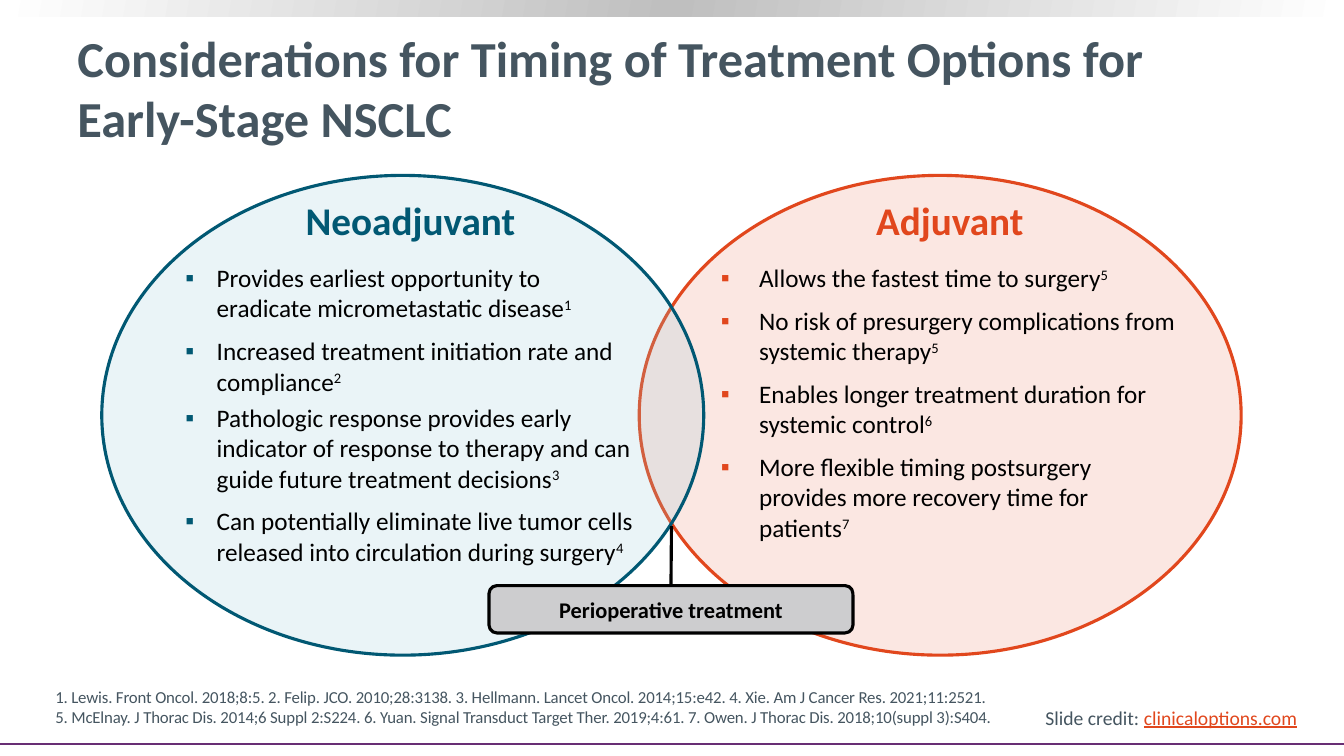
from copy import deepcopy

from lxml import etree
from pptx import Presentation
from pptx.dml.color import RGBColor
from pptx.enum.shapes import MSO_CONNECTOR, MSO_SHAPE
from pptx.enum.text import MSO_ANCHOR, PP_ALIGN
from pptx.oxml.ns import qn
from pptx.util import Inches, Pt

RECT, OVAL, ROUND = MSO_SHAPE.RECTANGLE, MSO_SHAPE.OVAL, MSO_SHAPE.ROUNDED_RECTANGLE
STRAIGHT = MSO_CONNECTOR.STRAIGHT
TOP, MIDDLE, BOTTOM = MSO_ANCHOR.TOP, MSO_ANCHOR.MIDDLE, MSO_ANCHOR.BOTTOM
LEFT, CENTER = PP_ALIGN.LEFT, PP_ALIGN.CENTER

WHITE = RGBColor(0xFF, 0xFF, 0xFF)
BLACK = RGBColor(0, 0, 0)
SILVER = RGBColor(0xBF, 0xBF, 0xBF)
GRAY = RGBColor(0xCD, 0xCD, 0xCF)
SLATE = RGBColor(0x45, 0x55, 0x60)
TEAL = RGBColor(0x01, 0x58, 0x73)
AQUA = RGBColor(0x94, 0xC7, 0xD6)
ORANGE = RGBColor(0xE1, 0x47, 0x1D)
CORAL = RGBColor(0xED, 0x90, 0x77)
PURPLE = RGBColor(0x68, 0x2E, 0x74)
FONT = "Calibri"

TITLE = "Considerations for Timing of Treatment Options for Early-Stage NSCLC"
# Each point: text, reference number, space after
EARLY = [
    ("Provides earliest opportunity to eradicate micrometastatic disease", "1", 9),
    ("Increased treatment initiation rate and compliance", "2", 4.5),
    ("Pathologic response provides early indicator of response to therapy "
     "and can guide future treatment decisions", "3", 9),
    ("Can potentially eliminate live tumor cells released into circulation "
     "during surgery", "4", 9),
]
LATE = [
    ("Allows the fastest time to surgery", "5", 9),
    ("No risk of presurgery complications from systemic therapy", "5", 9),
    ("Enables longer treatment duration for\nsystemic control", "6", 9),
    ("More flexible timing postsurgery provides more recovery time for patients", "7", 9),
]
SOURCES = (
    "1. Lewis. Front Oncol. 2018;8:5. 2. Felip. JCO. 2010;28:3138. "
    "3. Hellmann. Lancet Oncol. 2014;15:e42. 4. Xie. Am J Cancer Res. 2021;11:2521.\n"
    "5. McElnay. J Thorac Dis. 2014;6 Suppl 2:S224. "
    "6. Yuan. Signal Transduct Target Ther. 2019;4:61. "
    "7. Owen. J Thorac Dis. 2018;10(suppl 3):S404."
)


def add_run(para, text, size, color, bold=False):
    """Add text to a paragraph, with a line break at each newline."""
    for i, part in enumerate(text.split("\n")):
        if i:
            para.add_line_break()
        run = para.add_run()
        run.text = part
        font = run.font
        font.name, font.size, font.bold = FONT, Pt(size), bold
        font.color.rgb = color
    return run


def add_box(slide, area, anchor=TOP, wrap=True):
    frame = slide.shapes.add_textbox(*map(Inches, area)).text_frame
    frame.word_wrap = wrap
    frame.vertical_anchor = anchor
    return frame


def add_form(slide, kind, area, line=None):
    form = slide.shapes.add_shape(kind, *map(Inches, area))
    form.shadow.inherit = False
    if line is None:
        form.line.fill.background()
    else:
        form.line.color.rgb = line
        form.line.width = Pt(2.25)
    return form


def add_oval(slide, left, fill, alpha, line):
    oval = add_form(slide, OVAL, (left, 1.74, 5.97, 4.76), line)
    oval.fill.solid()
    oval.fill.fore_color.rgb = fill
    tint = oval.fill._xPr.find(qn("a:solidFill"))[0]
    etree.SubElement(tint, qn("a:alpha"), val=str(alpha * 1000))


def add_line(slide, start, end, color, width):
    line = slide.shapes.add_connector(STRAIGHT, *map(Inches, start + end))
    line.line.color.rgb = color
    line.line.width = Pt(width)
    etree.SubElement(line._element.spPr, qn("a:effectLst"))
    return line


def add_band(slide):
    """Draw the top band that fades from grey to white at both ends."""
    fill = add_form(slide, RECT, (0, 0, 13.33, 0.16)).fill
    fill.gradient()
    fill.gradient_angle = 170
    stops = fill._xPr.find(qn("a:gradFill")).find(qn("a:gsLst"))
    stops.insert(1, deepcopy(stops[0]))
    for stop, color, pos in zip(fill.gradient_stops, (WHITE, SILVER, WHITE), (0, 0.5, 1)):
        stop.color.rgb = color
        stop.position = pos


def set_bullet(para, color, indent):
    props = para._p.get_or_add_pPr()
    props.set("marL", str(Inches(indent)))
    props.set("indent", str(-Inches(indent)))
    tint = etree.SubElement(props, qn("a:buClr"))
    etree.SubElement(tint, qn("a:srgbClr"), val=str(color))
    etree.SubElement(props, qn("a:buFont"), typeface="Arial")
    etree.SubElement(props, qn("a:buChar"), char="▪")


def add_list(slide, area, head, points, color, indent):
    frame = add_box(slide, area)
    frame.margin_left = frame.margin_right = frame.margin_top = frame.margin_bottom = 0
    para = frame.paragraphs[0]
    para.alignment = CENTER
    para.space_after = Pt(13.5)
    add_run(para, head, 28, color, True)
    for text, ref, gap in points:
        para = frame.add_paragraph()
        para.space_after = Pt(gap)
        set_bullet(para, color, indent)
        add_run(para, text, 18, BLACK)
        mark = add_run(para, ref, 18, BLACK)
        mark.font._element.set("baseline", "30000")


def add_label(slide):
    """Add the label of the overlap and the line that leads to it."""
    label = add_form(slide, ROUND, (4.85, 5.81, 3.61, 0.47), BLACK)
    label.fill.solid()
    label.fill.fore_color.rgb = GRAY
    frame = label.text_frame
    frame.vertical_anchor = MIDDLE
    frame.paragraphs[0].alignment = CENTER
    add_run(frame.paragraphs[0], "Perioperative treatment", 16, BLACK, True)
    line = add_line(slide, (6.66, 5.22), (6.66, 5.81), BLACK, 2.25)
    line.end_connect(label, 0)


def add_foot(slide):
    para = add_box(slide, (10.27, 6.95, 2.72, 0.34), wrap=False).paragraphs[0]
    para.alignment = LEFT
    add_run(para, "Slide credit: ", 14, SLATE)
    add_run(para, "clinicaloptions.com", 14, ORANGE).font.underline = True
    para = add_box(slide, (0.45, 6.76, 9.67, 0.5), BOTTOM).paragraphs[0]
    add_run(para, SOURCES, 12, SLATE)
    for run in para.runs:
        run.font._element.set("spc", "-10")


def main():
    deck = Presentation()
    deck.slide_width, deck.slide_height = Inches(13.33), Inches(7.5)
    slide = deck.slides.add_slide(deck.slide_layouts[6])
    add_line(slide, (0, 7.38), (13.33, 7.38), PURPLE, 1.5)
    add_band(slide)
    title = add_box(slide, (0.67, 0.26, 11.89, 1.21), MIDDLE)
    add_run(title.paragraphs[0], TITLE, 36, SLATE, True)
    add_oval(slide, 6.34, CORAL, 21, ORANGE)
    add_oval(slide, 1.01, AQUA, 19, TEAL)
    add_list(slide, (1.84, 1.95, 4.46, 3.83), "Neoadjuvant", EARLY, TEAL, 0.31)
    add_label(slide)
    add_list(slide, (7.15, 1.95, 4.54, 3.47), "Adjuvant", LATE, ORANGE, 0.38)
    add_foot(slide)
    deck.save("out.pptx")


if __name__ == "__main__":
    main()
